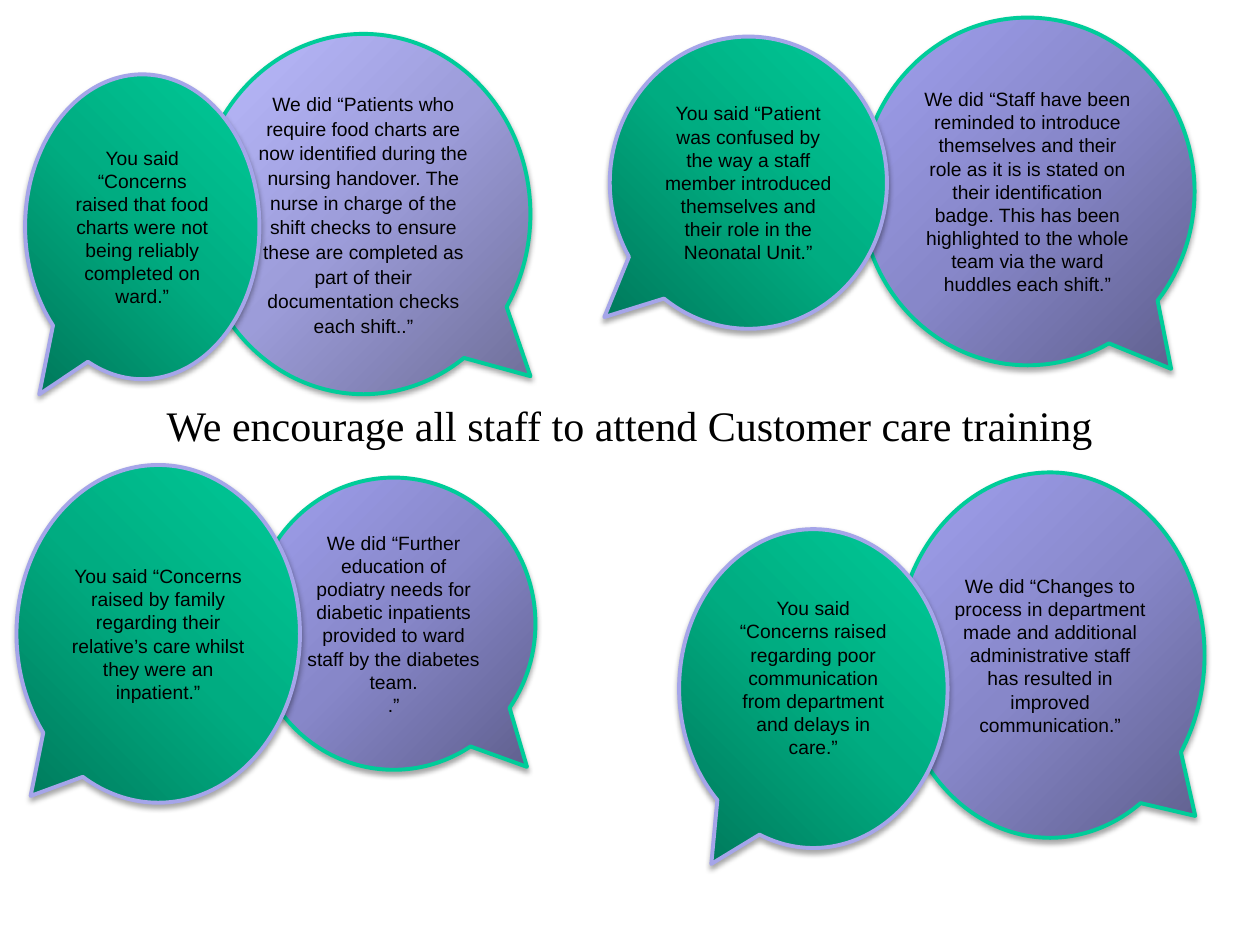
from lxml import etree
from pptx import Presentation
from pptx.dml.color import RGBColor
from pptx.enum.shapes import MSO_SHAPE
from pptx.enum.text import MSO_ANCHOR, MSO_AUTO_SIZE, PP_ALIGN
from pptx.oxml.ns import qn
from pptx.util import Pt

CALLOUT = MSO_SHAPE.OVAL_CALLOUT
MIDDLE = MSO_ANCHOR.MIDDLE
GROW = MSO_AUTO_SIZE.SHAPE_TO_FIT_TEXT
CENTER = PP_ALIGN.CENTER

BLACK = "000000"
MINT = "00CC99"
LILAC = "A5A5E9"
GREEN = ("00795B", "00AC81", "00CC99")
PURPLE = ("5F5F8D", "8787C9", "A0A0EE")
PALE = ("6E6E98", "9C9CD9", "BBBBFF")

PAIRS = [
    {
        "box": (14.4, 19.4, 288.7),
        "did": {
            "place": (0, 190.8, 205.9), "tail": (0.5, 0.45),
            "shades": PALE, "space": 1.07,
            "lines": ["We did “Patients who require food charts are now identified during "
                      "the nursing handover. The nurse in charge of the shift checks to ensure "
                      "these are completed as part of their documentation checks each shift..”"],
        },
        "said": {
            "place": (23.1, 133.9, 174.2), "tail": (-0.44, 0.55),
            "lines": ["You said “Concerns raised that food charts were not being "
                      "reliably completed on ward.”"],
        },
    },
    {
        "box": (348.5, 10.1, 334.1),
        "did": {
            "place": (0, 190.8, 198.7), "tail": (0.43, 0.51),
            "lines": ["We did “Staff have been reminded to introduce themselves and their "
                      "role as it is is stated on their identification badge. This has been "
                      "highlighted to the whole team via the ward huddles each shift.”"],
        },
        "said": {
            "place": (10.8, 158.4, 167), "tail": (-0.52, 0.46),
            "lines": ["You said “Patient was confused by the way a staff member introduced "
                      "themselves and their role in the Neonatal Unit.”"],
        },
    },
    {
        "box": (9.4, 265.7, 296.6),
        "did": {
            "place": (7.2, 162, 167), "tail": (0.47, 0.49),
            "lines": ["We did “Further education of podiatry needs for diabetic inpatients "
                      "provided to ward staff by the diabetes team.", ".”"],
        },
        "said": {
            "place": (0, 162, 193), "tail": (-0.45, 0.48),
            "lines": ["You said “Concerns raised by family regarding their relative’s care "
                      "whilst they were an inpatient.”"],
        },
    },
    {
        "box": (388.1, 270, 300.2),
        "did": {
            "place": (0, 176.4, 208.8), "tail": (0.47, 0.44),
            "lines": ["We did “Changes to process in department made and additional "
                      "administrative staff has resulted in improved communication.”"],
        },
        "said": {
            "place": (32.4, 153.4, 182.2), "tail": (-0.38, 0.55), "foot": 16.2,
            "lines": ["You said “Concerns raised regarding poor communication from "
                      "department and delays in care.”"],
        },
    },
]


def tint(code):
    """Turn a hex string into a colour."""
    return RGBColor.from_string(code)


def node(base, tag, **attrs):
    """Add a drawing element with attributes under base."""
    return etree.SubElement(base, qn("a:" + tag), {k: str(v) for k, v in attrs.items()})


def shade(shape, shades, left):
    """Give the shape a gradient that spreads from one lower corner."""
    grad = etree.Element(qn("a:gradFill"), rotWithShape="1")
    stops = node(grad, "gsLst")
    for spot, code in zip((0, 50000, 100000), shades):
        node(node(stops, "gs", pos=spot), "srgbClr", val=code)
    side = {"l": 0, "r": 100000} if left else {"l": 100000, "r": 0}
    node(node(grad, "path", path="circle"), "fillToRect", t=100000, b=0, **side)
    shape.element.spPr.find(qn("a:prstGeom")).addnext(grad)


def drop(shape):
    """Give the shape a soft shadow below."""
    shape.shadow.inherit = False
    base = shape.element.spPr.find(qn("a:effectLst"))
    cast = node(base, "outerShdw", blurRad=Pt(3.1), dist=Pt(1.8), dir=5400000, rotWithShape=0)
    node(node(cast, "srgbClr", val=BLACK), "alpha", val=35000)


def write(frame, lines, size, face, space=None):
    """Fill a text frame with centred paragraphs."""
    frame.word_wrap = True
    for i, line in enumerate(lines):
        para = frame.paragraphs[0] if i == 0 else frame.add_paragraph()
        para.alignment = CENTER
        if space:
            para.line_spacing = space
        run = para.add_run()
        run.text = line
        run.font.size = Pt(size)
        run.font.name = face
        run.font.color.rgb = tint(BLACK)


def bubble(slide, box, shades, edge, part):
    """Draw one speech bubble in its box."""
    shape = slide.shapes.add_shape(CALLOUT, *map(Pt, box))
    for i, value in enumerate(part["tail"]):
        shape.adjustments[i] = value
    shape.line.color.rgb = tint(edge)
    shape.line.width = Pt(2.25)
    shade(shape, shades, part["tail"][0] < 0)
    drop(shape)
    frame = shape.text_frame
    frame.vertical_anchor = MIDDLE
    frame.margin_bottom = Pt(part.get("foot", 3.6))
    write(frame, part["lines"], 11, "Arial", part.get("space"))


def pair(slide, box, did, said):
    """Set the reply at the right of the box and the comment over it at the left."""
    x, y, width = box
    down, wide, high = did["place"]
    bubble(slide, (x + width - wide, y + down, wide, high),
           did.get("shades", PURPLE), MINT, did)
    down, wide, high = said["place"]
    bubble(slide, (x, y + down, wide, high), GREEN, LILAC, said)


def banner(slide, box):
    """Write the training message across the middle."""
    frame = slide.shapes.add_textbox(*map(Pt, box)).text_frame
    frame.auto_size = GROW
    write(frame, ["We encourage all staff to attend Customer care training"],
          24, "Times New Roman")


def main():
    """Build and save the slide."""
    deck = Presentation()
    deck.slide_width, deck.slide_height = Pt(720), Pt(540)
    slide = deck.slides.add_slide(deck.slide_layouts[6])
    banner(slide, (54, 224.6, 612, 36))
    for item in PAIRS:
        pair(slide, **item)
    deck.save("out.pptx")


if __name__ == "__main__":
    main()
